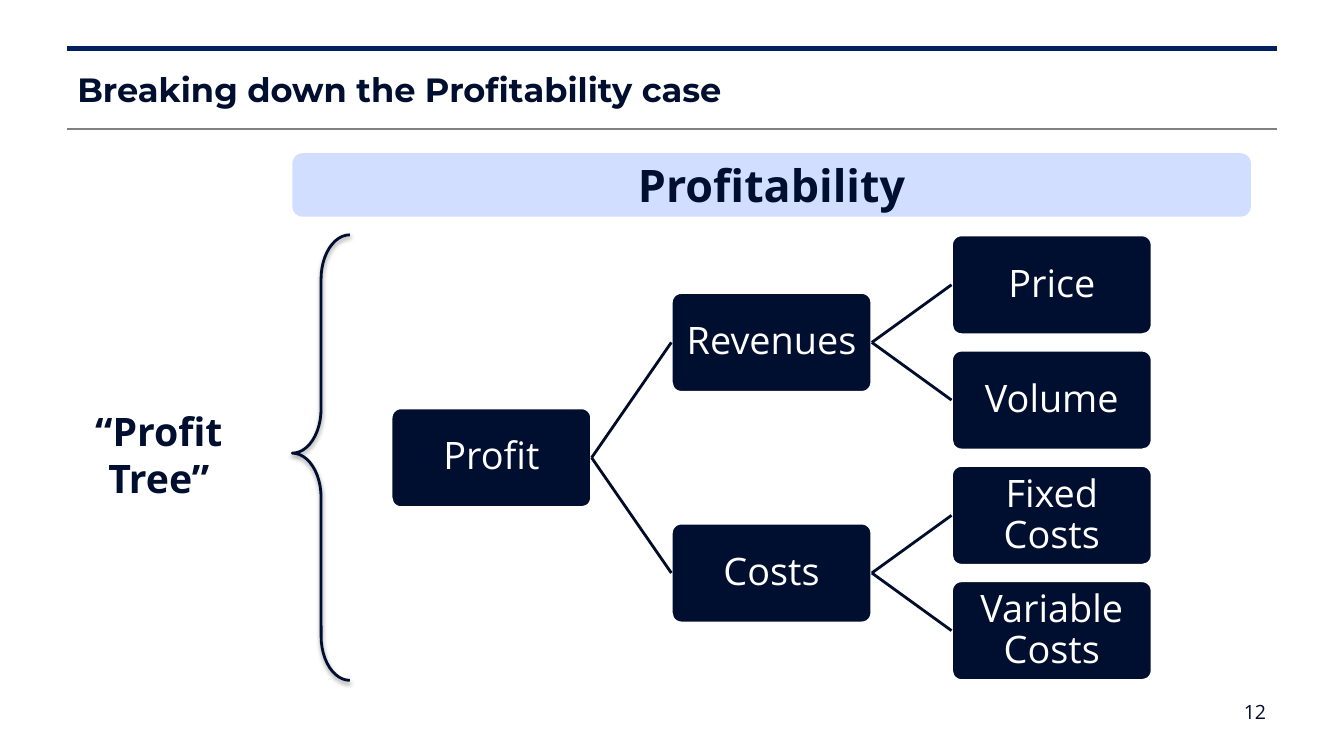
from lxml import etree
from pptx import Presentation
from pptx import util as u
from pptx.dml.color import RGBColor
from pptx.enum import shapes, text
from pptx.oxml import ns

PROFIT_TREE = {
    "Revenues": {"Price": {}, "Volume": {}},
    "Costs": {"Fixed Costs": {}, "Variable Costs": {}},
}


def rgb(value):
    return RGBColor.from_string(value)


def count_leaves(branches):
    return sum(map(count_leaves, branches.values())) or 1


class ProfitSlide:
    """Holds the style and the slide; lengths are percentages of the slide's size."""
    NAVY, WHITE, PALE = "000E2F", "FFFFFF", "D1DEFF"
    HEADING, BODY = "Montserrat", "Open Sans"
    LINK_COLOURS = ["000B26", "000D2B"]
    TREE_LEFT, TREE_TOP = 29.1, 31.07
    LEVEL_STEP, LEAF_STEP = 20.85, 15.25
    NODE_WIDTH, NODE_HEIGHT = 14.92, 13.2

    def __init__(self, deck):
        self.deck = deck
        self.slide = deck.slides.add_slide(deck.slide_layouts[5])

    def place(self, x, y):
        return (round(self.deck.slide_width * x / 100),
                round(self.deck.slide_height * y / 100))

    def box(self, x, y, width, height):
        return *self.place(x, y), *self.place(width, height)

    def set_words(self, part, words, size, font=None, colour=NAVY, bold=False,
                  align=text.PP_ALIGN.CENTER, inset=None, spacing=None):
        frame = part.text_frame
        frame.text = words
        frame.word_wrap = True
        frame.auto_size = text.MSO_AUTO_SIZE.NONE
        frame.vertical_anchor = text.MSO_ANCHOR.MIDDLE
        if inset is not None:
            frame.margin_left = frame.margin_right = u.Inches(inset)
            frame.margin_top = frame.margin_bottom = u.Inches(inset)
        paragraph = frame.paragraphs[0]
        paragraph.alignment = align
        paragraph.line_spacing = spacing
        style = paragraph.runs[0].font
        style.name, style.size, style.bold = font or self.BODY, u.Pt(size), bold
        style.color.rgb = rgb(colour)

    def title(self, words, *area):
        heading = self.slide.shapes.title
        heading.left, heading.top, heading.width, heading.height = self.box(*area)
        self.set_words(heading, words, 24, self.HEADING, bold=True,
                       align=text.PP_ALIGN.LEFT)

    def label(self, words, size, *area, bold=False):
        self.set_words(self.slide.shapes.add_textbox(*self.box(*area)), words, size,
                       bold=bold)

    def line(self, start, end, colour, width):
        rule = self.slide.shapes.add_connector(
            shapes.MSO_CONNECTOR.STRAIGHT, *self.place(*start), *self.place(*end))
        rule.line.color.rgb, rule.line.width = rgb(colour), u.Pt(width)
        etree.SubElement(rule.element.spPr, ns.qn("a:effectLst"))

    def panel(self, area, fill, outline=None):
        panel = self.slide.shapes.add_shape(
            shapes.MSO_SHAPE.ROUNDED_RECTANGLE, *self.box(*area))
        panel.shadow.inherit = False
        panel.fill.solid()
        panel.fill.fore_color.rgb = rgb(fill)
        if outline:
            panel.line.color.rgb, panel.line.width = rgb(outline), u.Pt(2)
        else:
            panel.line.fill.background()
        return panel

    def banner(self, words, *area):
        self.set_words(self.panel(area, self.PALE), words, 32, bold=True, inset=0.1)

    def brace(self, *area):
        brace = self.slide.shapes.add_shape(
            shapes.MSO_SHAPE.LEFT_BRACE, *self.box(*area))
        brace.adjustments[0], brace.adjustments[1] = 0.77, 0.49
        brace.fill.background()
        brace.line.color.rgb, brace.line.width = rgb(self.NAVY), u.Pt(2)
        brace.shadow.inherit = False
        effects = brace.element.spPr.find(ns.qn("a:effectLst"))
        shadow = etree.SubElement(
            effects, ns.qn("a:outerShdw"), blurRad=str(u.Pt(3.1)),
            dist=str(u.Pt(1.6)), dir="5400000", rotWithShape="0")
        tint = etree.SubElement(shadow, ns.qn("a:srgbClr"), val="000000")
        etree.SubElement(tint, ns.qn("a:alpha"), val="38000")

    def tree(self, name, branches, level=0, first_leaf=0):
        """Draws a node midway along its leaves, then its branches; returns its left middle."""
        row = first_leaf + (count_leaves(branches) - 1) / 2
        left = self.TREE_LEFT + level * self.LEVEL_STEP
        top = self.TREE_TOP + row * self.LEAF_STEP
        middle = top + self.NODE_HEIGHT / 2
        node = self.panel((left, top, self.NODE_WIDTH, self.NODE_HEIGHT),
                          self.NAVY, self.WHITE)
        node.adjustments[0] = 0.1
        self.set_words(node, name, 27, colour=self.WHITE, inset=0.05, spacing=0.9)
        for child, twigs in branches.items():
            child_end = self.tree(child, twigs, level + 1, first_leaf)
            self.line((left + self.NODE_WIDTH, middle), child_end,
                      self.LINK_COLOURS[level], 2)
            first_leaf += count_leaves(twigs)
        return left, middle


def main():
    deck = Presentation()
    deck.slide_width, deck.slide_height = u.Inches(13.33), u.Inches(7.5)
    page = ProfitSlide(deck)
    page.line((5, 6.4), (95, 6.4), "002060", 3.5)
    page.line((5, 17.07), (95, 17.07), "808080", 1.5)
    page.label("12", 14, 89.85, 91.47, 7.05, 5.33)
    page.title("Breaking down the Profitability case", 5, 6.4, 90, 10.67)
    page.tree("Profit", PROFIT_TREE)
    page.banner("Profitability", 21.75, 20.27, 71.33, 8.4)
    page.brace(21.75, 31.07, 4.28, 58.93)
    page.label("“Profit Tree”", 28, 2.4, 50, 18.83, 20.13, bold=True)
    deck.save("out.pptx")


if __name__ == "__main__":
    main()
